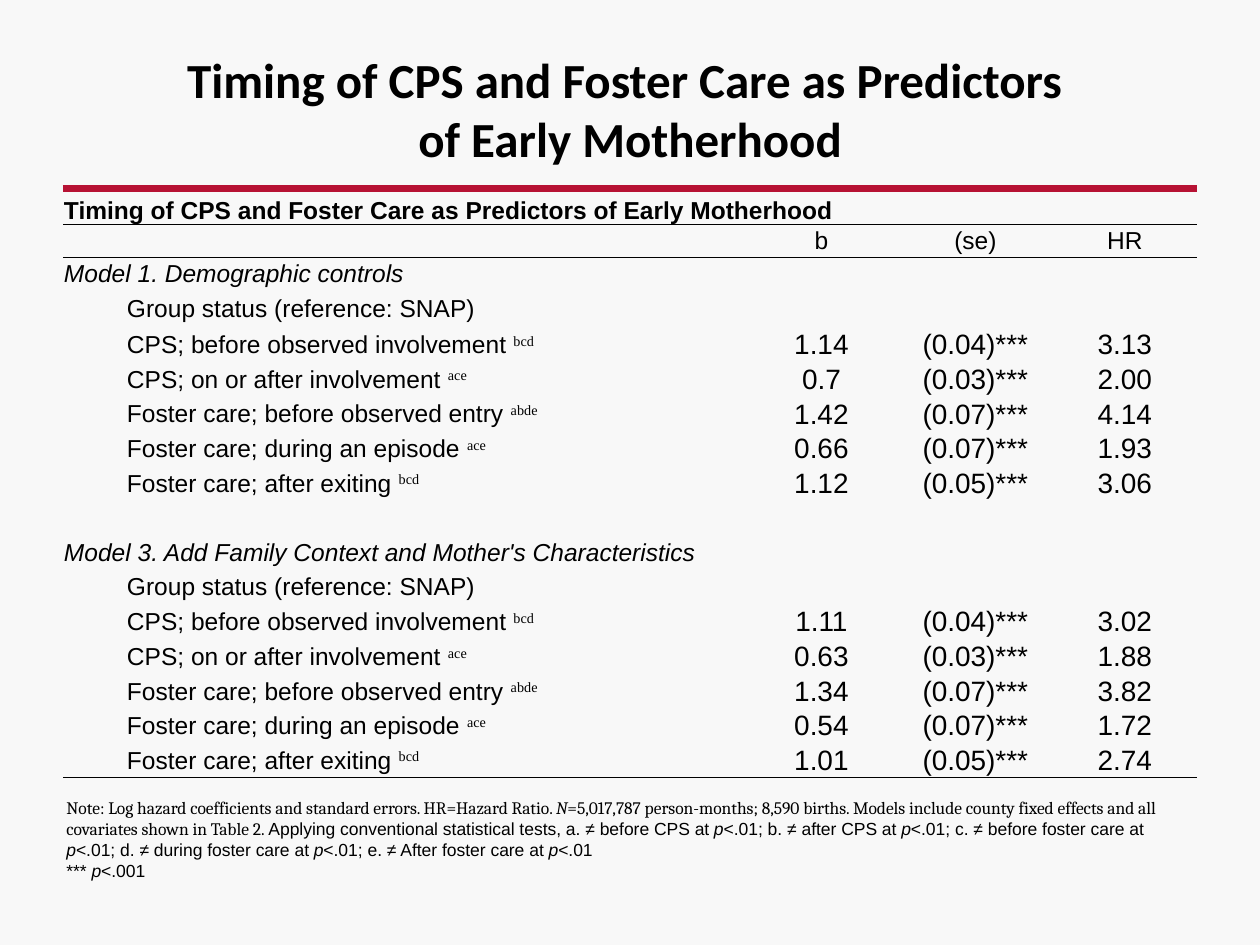
from lxml.etree import SubElement
from pptx import Presentation
from pptx.dml.color import RGBColor
from pptx.enum.shapes import MSO_CONNECTOR
from pptx.enum.text import MSO_ANCHOR, PP_ALIGN
from pptx.oxml import parse_xml
from pptx.oxml.ns import nsdecls, qn
from pptx.util import Pt

PX = 914400 // 126
COLORS = {"page": "F8F8F8", "rule": "B71234", "text": "000000"}
NO_STYLE = "{2D5ABB26-0587-4C30-8999-92F81FD0307C}"


def write(para, text, size=14, font="Arial", bold=False, italic=False, raised=False):
    span = para.add_run()
    span.text = text
    span.font.size = Pt(size)
    span.font.name = font
    span.font.bold = bold
    span.font.italic = italic
    span.font.color.rgb = RGBColor.from_string(COLORS["text"])
    if raised:
        span.font._element.set("baseline", "30000")


def underline_row(table, row):
    """Draw a thin line between this row and the next."""
    for index, side in ((row, "lnB"), (row + 1, "lnT")):
        if index < len(table.rows):
            for cell in table.rows[index].cells:
                cell._tc.get_or_add_tcPr().insert(0, parse_xml(
                    f'<a:{side} {nsdecls("a")} w="12700"><a:solidFill>'
                    f'<a:srgbClr val="{COLORS["text"]}"/></a:solidFill></a:{side}>'))


deck = Presentation()
deck.slide_width, deck.slide_height = 1260 * PX, 945 * PX
page = deck.slides.add_slide(deck.slide_layouts[6])
page.background.fill.solid()
page.background.fill.fore_color.rgb = RGBColor.from_string(COLORS["page"])

# Red rule and title
rule = page.shapes.add_connector(
    MSO_CONNECTOR.STRAIGHT, 63 * PX, 189 * PX, 1197 * PX, 189 * PX)
rule.line.color.rgb = RGBColor.from_string(COLORS["rule"])
rule.line.width = Pt(4)
SubElement(rule._element.spPr, qn("a:effectLst"))

title = page.shapes.add_textbox(63 * PX, 38 * PX, 1134 * PX, 141 * PX).text_frame
title.word_wrap = True
title.vertical_anchor = MSO_ANCHOR.MIDDLE
para = title.paragraphs[0]
para.alignment = PP_ALIGN.CENTER
write(para, "Timing of CPS and Foster Care as Predictors ", size=28, font="Calibri", bold=True)
para.add_line_break()
write(para, "of Early Motherhood", size=28, font="Calibri", bold=True)

# Table contents
GROUPS = [
    ("CPS; before observed involvement ", "bcd"),
    ("CPS; on or after involvement ", "ace"),
    ("Foster care; before observed entry ", "abde"),
    ("Foster care; during an episode ", "ace"),
    ("Foster care; after exiting ", "bcd"),
]
ERRORS = ["(0.04)***", "(0.03)***", "(0.07)***", "(0.07)***", "(0.05)***"]
MODELS = [
    (2, "Model 1. Demographic controls",
     ["1.14", "0.7", "1.42", "0.66", "1.12"],
     ["3.13", "2.00", "4.14", "1.93", "3.06"]),
    (10, "Model 3. Add Family Context and Mother's Characteristics",
     ["1.11", "0.63", "1.34", "0.54", "1.01"],
     ["3.02", "1.88", "3.82", "1.72", "2.74"]),
]
COLUMN_WIDTHS = [682, 153, 155, 144]
ROW_HEIGHTS = [30, 33, 33, 37] + [34] * 5 + [36, 33, 35] + [34] * 5

frame = page.shapes.add_table(
    len(ROW_HEIGHTS), len(COLUMN_WIDTHS), 63 * PX, 194 * PX,
    sum(COLUMN_WIDTHS) * PX, sum(ROW_HEIGHTS) * PX)
table = frame.table
table.first_row = table.horz_banding = False
table._tbl.tblPr.find(qn("a:tableStyleId")).text = NO_STYLE
for column, width in zip(table.columns, COLUMN_WIDTHS):
    column.width = width * PX
for row, height in zip(table.rows, ROW_HEIGHTS):
    row.height = height * PX
    for index, cell in enumerate(row.cells):
        cell.fill.background()
        cell.margin_left = cell.margin_right = cell.margin_top = PX
        cell.margin_bottom = 0
        cell.vertical_anchor = MSO_ANCHOR.MIDDLE
        para = cell.text_frame.paragraphs[0]
        para.alignment = PP_ALIGN.CENTER if index else PP_ALIGN.LEFT
        SubElement(para._p, qn("a:endParaRPr")).set("sz", "1400")

caption = table.cell(0, 0)
caption.merge(table.cell(0, 3))
caption.vertical_anchor = MSO_ANCHOR.BOTTOM
write(caption.text_frame.paragraphs[0],
      "Timing of CPS and Foster Care as Predictors of Early Motherhood", bold=True)
for column, heading in enumerate(["b", "(se)", "HR"], start=1):
    write(table.cell(1, column).text_frame.paragraphs[0], heading)

table.cell(10, 0).merge(table.cell(10, 2))
for top, model, coefficients, ratios in MODELS:
    write(table.cell(top, 0).text_frame.paragraphs[0], model, italic=True)
    labels = [("Group status (reference: SNAP)", "")] + GROUPS
    for row, (label, marks) in enumerate(labels, start=top + 1):
        para = table.cell(row, 0).text_frame.paragraphs[0]
        para.level = 1
        para._p.get_or_add_pPr().set("marL", str(63 * PX))
        para._p.get_or_add_pPr().set("indent", "0")
        write(para, label)
        if marks:
            write(para, marks, font="Times New Roman", raised=True)
    for row, values in enumerate(zip(coefficients, ERRORS, ratios), start=top + 2):
        for column, value in enumerate(values, start=1):
            write(table.cell(row, column).text_frame.paragraphs[0], value, size=16)

underline_row(table, 0)
underline_row(table, len(ROW_HEIGHTS) - 1)

# Note below the table
note = page.shapes.add_textbox(54 * PX, 791 * PX, 1134 * PX, 97 * PX).text_frame
note.word_wrap = True
para = note.paragraphs[0]
write(para, "Note: Log hazard coefficients and standard errors. HR=Hazard Ratio. ",
      size=10, font="Cambria")
write(para, "N", size=10, font="Cambria", italic=True)
write(para, "=5,017,787 person-months; 8,590 births. Models include county fixed effects "
      "and all covariates shown in Table 2.", size=10, font="Cambria")
TESTS = [
    " Applying conventional statistical tests, a. ≠ before CPS at ",
    "<.01; b. ≠ after CPS at ",
    "<.01; c. ≠ before foster care at ",
    "<.01; d. ≠ during foster care at ",
    "<.01; e. ≠ After foster care at ",
]
for test in TESTS:
    write(para, test, size=10)
    write(para, "p", size=10, italic=True)
write(para, "<.01", size=10)
para = note.add_paragraph()
write(para, "*** ", size=10)
write(para, "p", size=10, italic=True)
write(para, "<.001", size=10)

deck.save("out.pptx")
